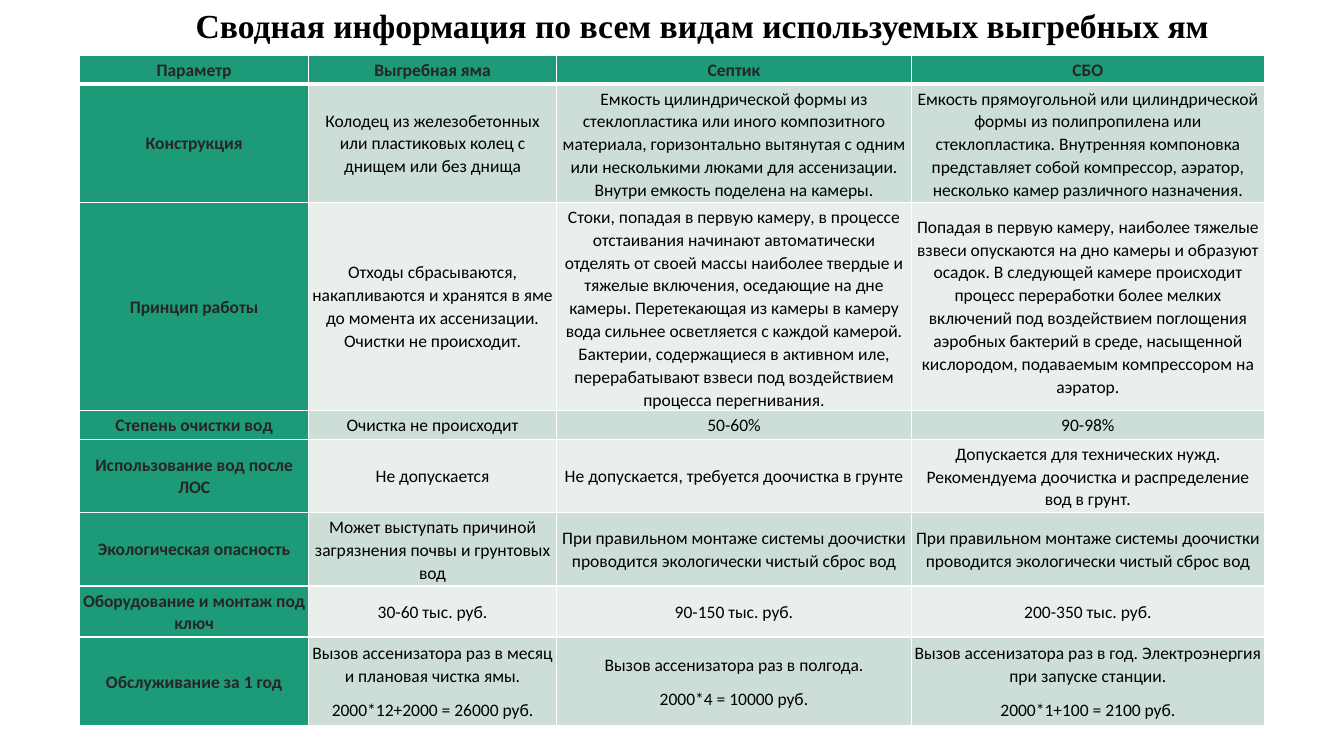
"""Builds a slide comparing cesspit, septic tank and biological treatment station."""
from dataclasses import dataclass
from typing import Any

from lxml import etree
from pptx import Presentation
from pptx import util as u
from pptx.dml import color
from pptx.enum import text
from pptx.oxml import ns

COLORS = {
    "accent": "1D9A78", "odd": "CDDED6", "even": "E8EFEC",
    "label": "262626", "body": "000000", "border": "FFFFFF",
}
COLUMN_WIDTHS = (2.27, 2.46, 3.52, 3.5)
TITLE = "Сводная информация по всем видам используемых выгребных ям"
CELL_FRAME = {
    "vertical_anchor": text.MSO_ANCHOR.MIDDLE,
    "margin_left": u.Inches(0.03), "margin_right": u.Inches(0.03),
    "margin_top": u.Inches(0.03), "margin_bottom": u.Inches(0.03),
}
TITLE_FRAME = {"vertical_anchor": text.MSO_ANCHOR.MIDDLE, "word_wrap": True}
CELL_PARAGRAPH = {
    "alignment": text.PP_ALIGN.CENTER, "line_spacing": 1.07, "space_after": u.Pt(8),
}
TITLE_PARAGRAPH = {"alignment": text.PP_ALIGN.CENTER, "line_spacing": 0.9}
BODY_FONT = {"name": "Calibri", "size": u.Pt(12.5), "bold": False}
LABEL_FONT = BODY_FONT | {"bold": True}
TITLE_FONT = {"name": "Times New Roman", "size": u.Pt(24), "bold": True}


@dataclass(frozen=True)
class Parameter:
    height: float
    name: str
    cesspit: str
    septic: str
    station: str

    def texts(self) -> tuple[str, ...]:
        return self.name, self.cesspit, self.septic, self.station


CLEAN_DISCHARGE = (
    "При правильном монтаже системы доочистки проводится экологически чистый сброс вод"
)
PARAMETERS = (
    Parameter(0.28, "Параметр", "Выгребная яма", "Септик", "СБО"),
    Parameter(
        1.16, "Конструкция",
        "Колодец из железобетонных или пластиковых колец с днищем или без днища",
        "Емкость цилиндрической формы из стеклопластика или иного композитного материала, "
        "горизонтально вытянутая с одним или несколькими люками для ассенизации. "
        "Внутри емкость поделена на камеры.",
        "Емкость прямоугольной или цилиндрической формы из полипропилена или "
        "стеклопластика. Внутренняя компоновка представляет собой компрессор, аэратор, "
        "несколько камер различного назначения.",
    ),
    Parameter(
        2.05, "Принцип работы",
        "Отходы сбрасываются, накапливаются и хранятся в яме до момента их ассенизации. "
        "Очистки не происходит.",
        "Стоки, попадая в первую камеру, в процессе отстаивания начинают автоматически "
        "отделять от своей массы наиболее твердые и тяжелые включения, оседающие на дне "
        "камеры. Перетекающая из камеры в камеру вода сильнее осветляется с каждой "
        "камерой. Бактерии, содержащиеся в активном иле, перерабатывают взвеси под "
        "воздействием процесса перегнивания.",
        "Попадая в первую камеру, наиболее тяжелые взвеси опускаются на дно камеры и "
        "образуют осадок. В следующей камере происходит процесс переработки более мелких "
        "включений под воздействием поглощения аэробных бактерий в среде, насыщенной "
        "кислородом, подаваемым компрессором на аэратор.",
    ),
    Parameter(0.27, "Степень очистки вод", "Очистка не происходит", "50-60%", "90-98%"),
    Parameter(
        0.72, "Использование вод после ЛОС", "Не допускается",
        "Не допускается, требуется доочистка в грунте",
        "Допускается для технических нужд. Рекомендуема доочистка и распределение "
        "вод в грунт.",
    ),
    Parameter(
        0.72, "Экологическая опасность",
        "Может выступать причиной загрязнения почвы и грунтовых вод",
        CLEAN_DISCHARGE, CLEAN_DISCHARGE,
    ),
    Parameter(
        0.5, "Оборудование и монтаж под ключ",
        "30-60 тыс. руб.", "90-150 тыс. руб.", "200-350 тыс. руб.",
    ),
    Parameter(
        0.88, "Обслуживание за 1 год",
        "Вызов ассенизатора раз в месяц и плановая чистка ямы.\n2000*12+2000 = 26000 руб.",
        "Вызов ассенизатора раз в полгода.\n2000*4 = 10000 руб.",
        "Вызов ассенизатора раз в год. Электроэнергия при запуске станции.\n"
        "2000*1+100 = 2100 руб.",
    ),
)


def apply_format(target: Any, values: dict[str, Any]) -> None:
    for attribute, value in values.items():
        setattr(target, attribute, value)


def write_text(frame: Any, content: str, paragraph_format: dict[str, Any],
               font_format: dict[str, Any], ink: str) -> None:
    frame.text = content
    for paragraph in frame.paragraphs:
        apply_format(paragraph, paragraph_format)
        for run in paragraph.runs:
            apply_format(run.font, font_format)
            run.font.color.rgb = color.RGBColor.from_string(COLORS[ink])


def add_borders(cell: Any, row: int) -> None:
    properties = cell._tc.get_or_add_tcPr()
    widths = {"lnL": 1, "lnR": 1, "lnT": 3 if row == 1 else 1, "lnB": 3 if row == 0 else 1}
    for position, (side, width) in enumerate(widths.items()):
        border = etree.Element(ns.qn(f"a:{side}"), w=str(u.Pt(width)))
        fill = etree.SubElement(border, ns.qn("a:solidFill"))
        etree.SubElement(fill, ns.qn("a:srgbClr"), val=COLORS["border"])
        properties.insert(position, border)


def draw_cell(cell: Any, content: str, row: int, column: int) -> None:
    is_label = row == 0 or column == 0
    band = "accent" if is_label else "odd" if row % 2 else "even"
    apply_format(cell, CELL_FRAME)
    cell.fill.solid()
    cell.fill.fore_color.rgb = color.RGBColor.from_string(COLORS[band])
    add_borders(cell, row)
    write_text(cell.text_frame, content, CELL_PARAGRAPH,
               LABEL_FONT if is_label else BODY_FONT, "label" if is_label else "body")


def draw_title(slide: Any) -> None:
    heading = slide.shapes.add_textbox(
        u.Inches(1), u.Inches(-0.6), u.Inches(11.93), u.Inches(1.75))
    apply_format(heading.text_frame, TITLE_FRAME)
    write_text(heading.text_frame, TITLE, TITLE_PARAGRAPH, TITLE_FONT, "body")


def draw_comparison(slide: Any) -> None:
    comparison = slide.shapes.add_table(
        len(PARAMETERS), len(COLUMN_WIDTHS), u.Inches(0.79), u.Inches(0.55),
        u.Inches(sum(COLUMN_WIDTHS)), u.Inches(sum(p.height for p in PARAMETERS))).table
    for column, width in enumerate(COLUMN_WIDTHS):
        comparison.columns[column].width = u.Inches(width)
    for row, parameter in enumerate(PARAMETERS):
        comparison.rows[row].height = u.Inches(parameter.height)
        for column, content in enumerate(parameter.texts()):
            draw_cell(comparison.cell(row, column), content, row, column)


def main() -> None:
    deck = Presentation()
    apply_format(deck, {"slide_width": u.Inches(13.33), "slide_height": u.Inches(7.5)})
    slide = deck.slides.add_slide(deck.slide_layouts[6])
    draw_title(slide)
    draw_comparison(slide)
    deck.save("out.pptx")


if __name__ == "__main__":
    main()
